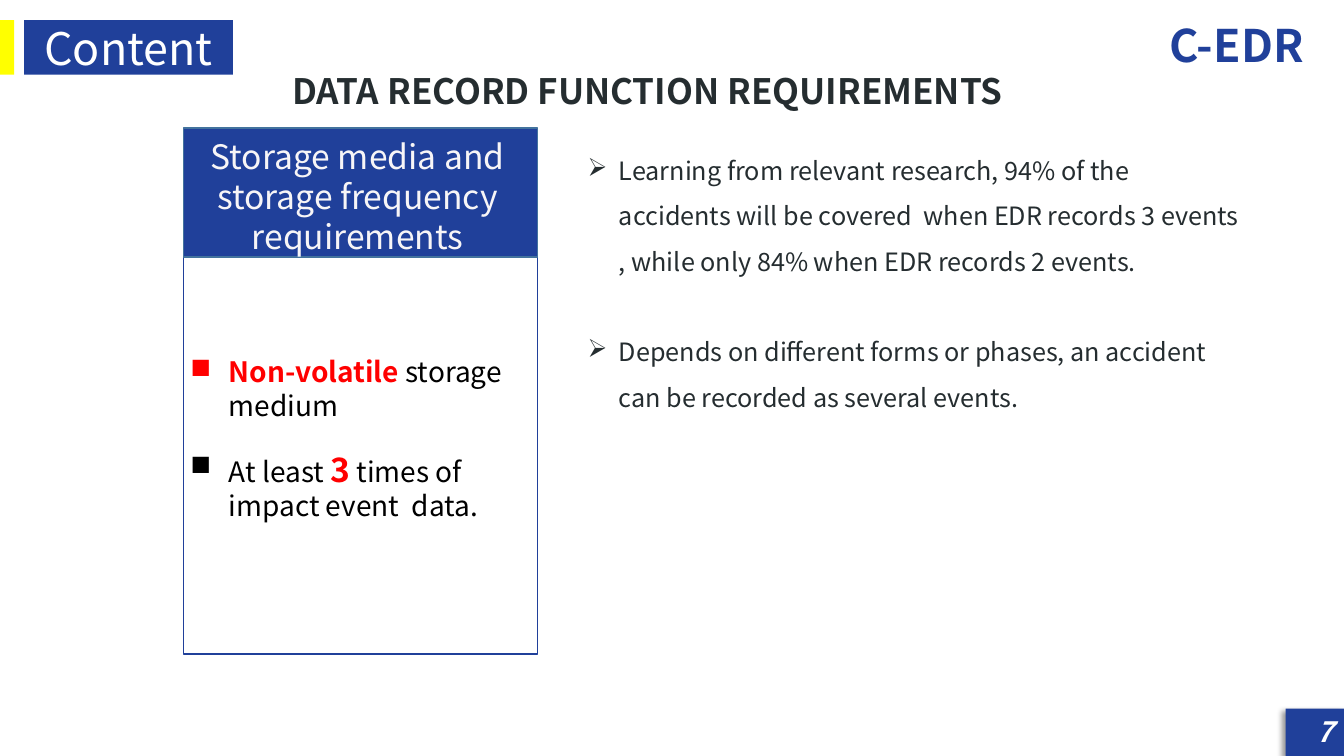
from lxml import etree
from pptx import Presentation
from pptx.dml.color import RGBColor
from pptx.enum.shapes import MSO_SHAPE
from pptx.enum.text import MSO_ANCHOR, MSO_AUTO_SIZE, PP_ALIGN
from pptx.oxml import parse_xml
from pptx.util import Inches, Pt

RECT = MSO_SHAPE.RECTANGLE
TOP, MIDDLE = MSO_ANCHOR.TOP, MSO_ANCHOR.MIDDLE
LEFT, CENTER, RIGHT = PP_ALIGN.LEFT, PP_ALIGN.CENTER, PP_ALIGN.RIGHT
NS = "http://schemas.openxmlformats.org/drawingml/2006/main"
FONT = "Noto Sans CJK SC"
BLUE, WHITE, YELLOW = "20409A", "FFFFFF", "FFFF00"
RED, BLACK, DARK, PALE = "FF0000", "000000", "252D30", "F7F5F7"

TITLE = "DATA RECORD FUNCTION REQUIREMENTS"
HEAD = "Storage media and storage frequency requirements"
# Each run: text, size, colour, bold
RULES = [
    [("Non-volatile", 20, RED, True), (" storage medium", 20, BLACK, False)],
    [("At least ", 20, BLACK, False), ("3", 24, RED, True),
     (" times of impact event  data.", 20, BLACK, False)],
]
NOTES = [
    [("Learning from relevant research, 94% of the accidents will be covered  "
      "when EDR records 3 events , while only 84% when EDR records 2 events.",
      18, DARK, False)],
    [("Depends on different forms or phases, an accident can be recorded as "
      "several events.", 18, DARK, False)],
]

# Left, top, width, height in inches
CARD_X, CARD_W = 1.82, 3.51
HEAD_Y, HEAD_H, BODY_H = 1.27, 1.28, 3.94
BAR_Y, BAR_H = 0.2, 0.54


def color(code):
    return RGBColor.from_string(code)


def style(font, size, code, bold=False, italic=False):
    font.name, font.size = FONT, Pt(size)
    font.color.rgb = color(code)
    font.bold, font.italic = bold, italic


def box(at, fill, line=None):
    shape = slide.shapes.add_shape(RECT, *map(Inches, at))
    shape.shadow.inherit = False
    shape.fill.solid()
    shape.fill.fore_color.rgb = color(fill)
    if line:
        shape.line.color.rgb = color(line)
        shape.line.width = Pt(1)
    else:
        shape.line.fill.background()
    return shape


def label(at):
    return slide.shapes.add_textbox(*map(Inches, at))


def write(shape, text, size, code, align, anchor=TOP, inset=None, **look):
    frame = shape.text_frame
    frame.word_wrap = True
    frame.vertical_anchor = anchor
    if inset is not None:
        frame.margin_left = frame.margin_right = Inches(inset)
        frame.margin_top = frame.margin_bottom = Inches(inset)
    frame.text = text
    para = frame.paragraphs[0]
    para.alignment = align
    style(para.font, size, code, **look)


def bullets(shape, items, mark, indent, gap, spacing):
    frame = shape.text_frame
    frame.word_wrap = True
    for i, item in enumerate(items):
        para = frame.add_paragraph() if i else frame.paragraphs[0]
        para.line_spacing = spacing
        if i:
            para.space_before = Pt(gap)
        props = para._p.get_or_add_pPr()
        props.set("marL", str(Inches(indent)))
        props.set("indent", str(-Inches(indent)))
        etree.SubElement(props, f"{{{NS}}}buChar", char=mark)
        for text, size, code, bold in item:
            run = para.add_run()
            run.text = text
            style(run.font, size, code, bold)


def shade(shape):
    """Give the shape a soft shadow to its lower left."""
    props = shape._element.spPr
    props.remove(props.find(f"{{{NS}}}effectLst"))
    props.append(parse_xml(
        f'<a:effectLst xmlns:a="{NS}">'
        f'<a:outerShdw blurRad="{Pt(4)}" dist="{Pt(3)}" dir="{135 * 60000}" '
        'algn="tr" rotWithShape="0"><a:srgbClr val="000000">'
        '<a:alpha val="40000"/></a:srgbClr></a:outerShdw></a:effectLst>'))


prs = Presentation()
prs.slide_width, prs.slide_height = Inches(13.33), Inches(7.5)
slide = prs.slides.add_slide(prs.slide_layouts[5])

title = slide.shapes.title
title.left, title.top = Inches(2.87), Inches(0.66)
title.width, title.height = Inches(7.6), Inches(0.48)
write(title, TITLE, 25, DARK, LEFT, inset=0.03, bold=True)
title.text_frame.auto_size = MSO_AUTO_SIZE.NONE

# Corner labels
shade(box((12.75, 7.03, 0.59, 0.47), BLUE))
write(label((10.29, 0.13, 2.74, 0.64)), "C-EDR", 32, BLUE, RIGHT, bold=True)
write(label((10.32, 7.06, 3, 0.4)), "7", 20, WHITE, RIGHT, MIDDLE,
      bold=True, italic=True)
write(box((0.24, BAR_Y, 2.07, BAR_H), BLUE), "Content", 32, WHITE, CENTER, MIDDLE)
box((0, BAR_Y, 0.14, BAR_H), YELLOW)

# Storage card
box((CARD_X, HEAD_Y + HEAD_H, CARD_W, BODY_H), WHITE, BLUE)
box((CARD_X, HEAD_Y, CARD_W, HEAD_H), BLUE, "43739E")
write(label((1.79, 1.34, CARD_W, 1.21)), HEAD, 24, PALE, CENTER, MIDDLE, inset=0)
bullets(label((1.79, 3.47, 3.53, 1.78)), RULES, "■", 0.38, 19, 1.0)

# Findings
bullets(label((5.73, 1.34, 6.67, 2.77)), NOTES, "➢", 0.31, 32.4, 1.5)

prs.save("out.pptx")
